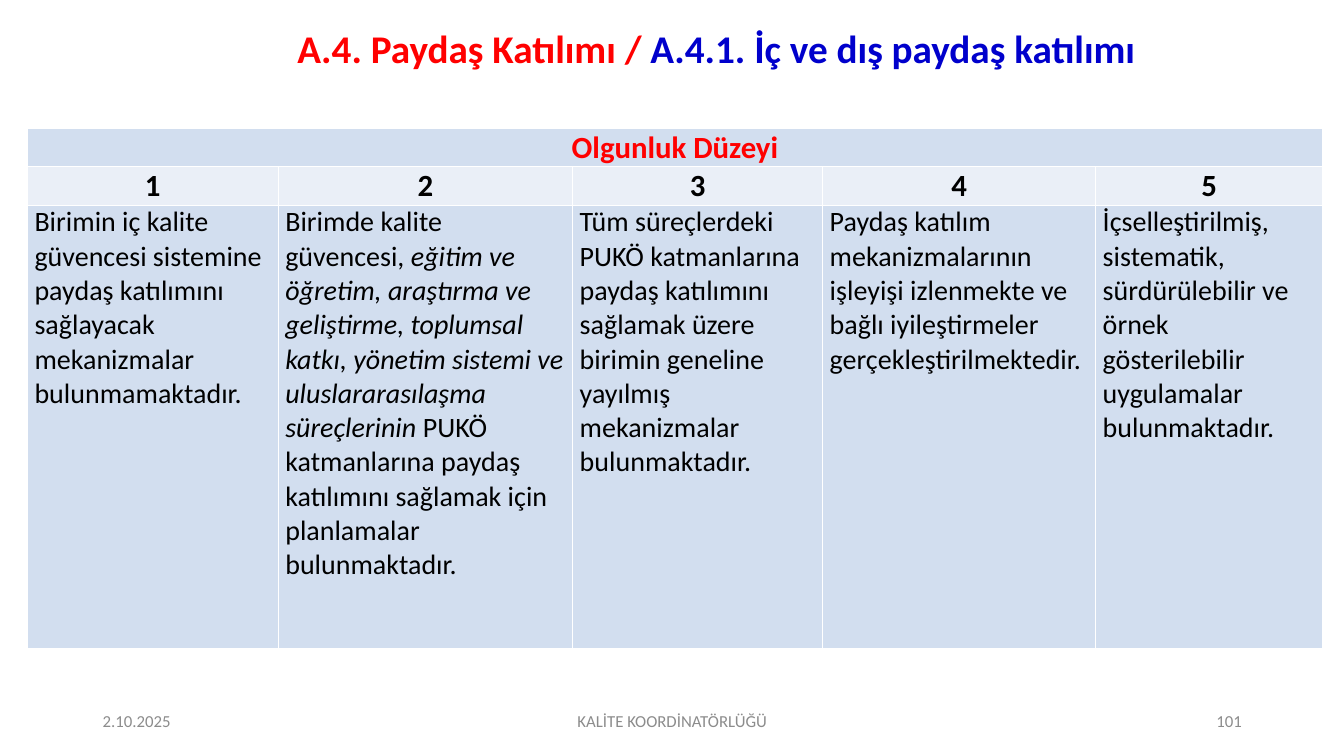
"""Build the stakeholder participation maturity slide."""
from dataclasses import dataclass

from lxml.etree import SubElement
from pptx import Presentation
from pptx.dml.color import RGBColor
from pptx.enum.text import MSO_ANCHOR, MSO_AUTO_SIZE, PP_ALIGN
from pptx.oxml.ns import qn
from pptx.slide import Slide
from pptx.table import _Cell
from pptx.text.text import _Paragraph
from pptx.util import Cm, Pt

FONT = "Calibri"
RED = RGBColor(0xFF, 0x00, 0x00)
BLUE = RGBColor(0x00, 0x00, 0xCC)
BLACK = RGBColor(0x00, 0x00, 0x00)
WHITE = RGBColor(0xFF, 0xFF, 0xFF)
GRAY = RGBColor(0x8C, 0x8C, 0x8C)
BAND_DARK = RGBColor(0xD2, 0xDE, 0xEF)
BAND_LIGHT = RGBColor(0xEA, 0xEF, 0xF7)


@dataclass(frozen=True)
class Run:
    text: str
    size: int = 20
    color: RGBColor = BLACK
    bold: bool = False
    italic: bool = False


@dataclass(frozen=True)
class Level:
    width: float
    runs: tuple[Run, ...]


@dataclass(frozen=True)
class Footer:
    left: float
    width: float
    text: str
    align: PP_ALIGN


TITLE = (
    Run("A.4. Paydaş Katılımı / ", 28, RED, True),
    Run("A.4.1. İç ve dış paydaş katılımı", 28, BLUE, True),
)
HEADING = Run("Olgunluk Düzeyi", 22, RED, True)
ROW_HEIGHTS = (0.97, 0.97, 11.18)
LEVELS = (
    Level(6.32, (Run("Birimin iç kalite güvencesi sistemine paydaş katılımını sağlayacak "
                     "mekanizmalar bulunmamaktadır."),)),
    Level(7.42, (
        Run("Birimde kalite güvencesi, "),
        Run("eğitim ve öğretim, araştırma ve geliştirme, toplumsal katkı, yönetim sistemi "
            "ve uluslararasılaşma süreçlerinin", italic=True),
        Run(" PUKÖ katmanlarına paydaş katılımını sağlamak için planlamalar bulunmaktadır."),
    )),
    Level(6.3, (Run("Tüm süreçlerdeki PUKÖ katmanlarına paydaş katılımını sağlamak üzere "
                    "birimin geneline yayılmış mekanizmalar bulunmaktadır."),)),
    Level(6.88, (Run("Paydaş katılım mekanizmalarının işleyişi izlenmekte ve bağlı "
                     "iyileştirmeler gerçekleştirilmektedir."),)),
    Level(5.72, (Run("İçselleştirilmiş, sistematik, sürdürülebilir ve örnek gösterilebilir "
                     "uygulamalar bulunmaktadır."),)),
)
FOOTERS = (
    Footer(2.34, 7.62, "2.10.2025", PP_ALIGN.LEFT),
    Footer(11.23, 11.43, "KALİTE KOORDİNATÖRLÜĞÜ", PP_ALIGN.CENTER),
    Footer(23.93, 7.62, "101", PP_ALIGN.RIGHT),
)


def write(p: _Paragraph, runs: tuple[Run, ...], align: PP_ALIGN) -> None:
    p.alignment = align
    for run in runs:
        r = p.add_run()
        r.text = run.text
        r.font.name = FONT
        r.font.size = Pt(run.size)
        r.font.bold = run.bold
        r.font.italic = run.italic
        r.font.color.rgb = run.color


def add_borders(cell: _Cell) -> None:
    tc_pr = cell._tc.get_or_add_tcPr()
    for side in ("a:lnL", "a:lnR", "a:lnT", "a:lnB"):
        line = SubElement(tc_pr, qn(side), w=str(Pt(1)))
        fill = SubElement(line, qn("a:solidFill"))
        SubElement(fill, qn("a:srgbClr"), val=str(WHITE))


def format_cell(cell: _Cell, fill: RGBColor, anchor: MSO_ANCHOR) -> None:
    add_borders(cell)
    cell.fill.solid()
    cell.fill.fore_color.rgb = fill
    cell.vertical_anchor = anchor
    cell.margin_left = cell.margin_right = Cm(0.18)
    cell.margin_top = cell.margin_bottom = 0


def fill_cell(cell: _Cell, runs: tuple[Run, ...], align: PP_ALIGN) -> None:
    p = cell.text_frame.paragraphs[0]
    p.space_after = Pt(4)
    write(p, runs, align)


def add_title(s: Slide) -> None:
    sp = s.shapes.title
    sp.left, sp.top, sp.width, sp.height = Cm(2.24), Cm(0.53), Cm(31.62), Cm(1.52)
    tf = sp.text_frame
    tf.auto_size = MSO_AUTO_SIZE.NONE
    tf.vertical_anchor = MSO_ANCHOR.MIDDLE
    p = tf.paragraphs[0]
    p.line_spacing = 0.9
    write(p, TITLE, PP_ALIGN.CENTER)


def add_levels(s: Slide) -> None:
    width = sum(level.width for level in LEVELS)
    table = s.shapes.add_table(len(ROW_HEIGHTS), len(LEVELS), Cm(0.69), Cm(3.23),
                               Cm(width), Cm(sum(ROW_HEIGHTS))).table
    table.first_row = table.horz_banding = False
    for row, height in zip(table.rows, ROW_HEIGHTS):
        row.height = Cm(height)
    for i, level in enumerate(LEVELS):
        table.columns[i].width = Cm(level.width)
        format_cell(table.cell(0, i), BAND_DARK, MSO_ANCHOR.BOTTOM)
        format_cell(table.cell(1, i), BAND_LIGHT, MSO_ANCHOR.BOTTOM)
        format_cell(table.cell(2, i), BAND_DARK, MSO_ANCHOR.TOP)
        fill_cell(table.cell(1, i), (Run(str(i + 1), 22, bold=True),), PP_ALIGN.CENTER)
        fill_cell(table.cell(2, i), level.runs, PP_ALIGN.LEFT)
    table.cell(0, 0).merge(table.cell(0, len(LEVELS) - 1))
    fill_cell(table.cell(0, 0), (HEADING,), PP_ALIGN.CENTER)


def add_footer(s: Slide, footer: Footer) -> None:
    sp = s.shapes.add_textbox(Cm(footer.left), Cm(17.65), Cm(footer.width), Cm(1.02))
    tf = sp.text_frame
    tf.word_wrap = True
    tf.vertical_anchor = MSO_ANCHOR.MIDDLE
    write(tf.paragraphs[0], (Run(footer.text, 12, GRAY),), footer.align)


def main() -> None:
    prs = Presentation()
    prs.slide_width, prs.slide_height = Cm(33.87), Cm(19.05)
    s = prs.slides.add_slide(prs.slide_layouts[5])
    add_title(s)
    add_levels(s)
    for footer in FOOTERS:
        add_footer(s, footer)
    prs.save("out.pptx")


if __name__ == "__main__":
    main()
